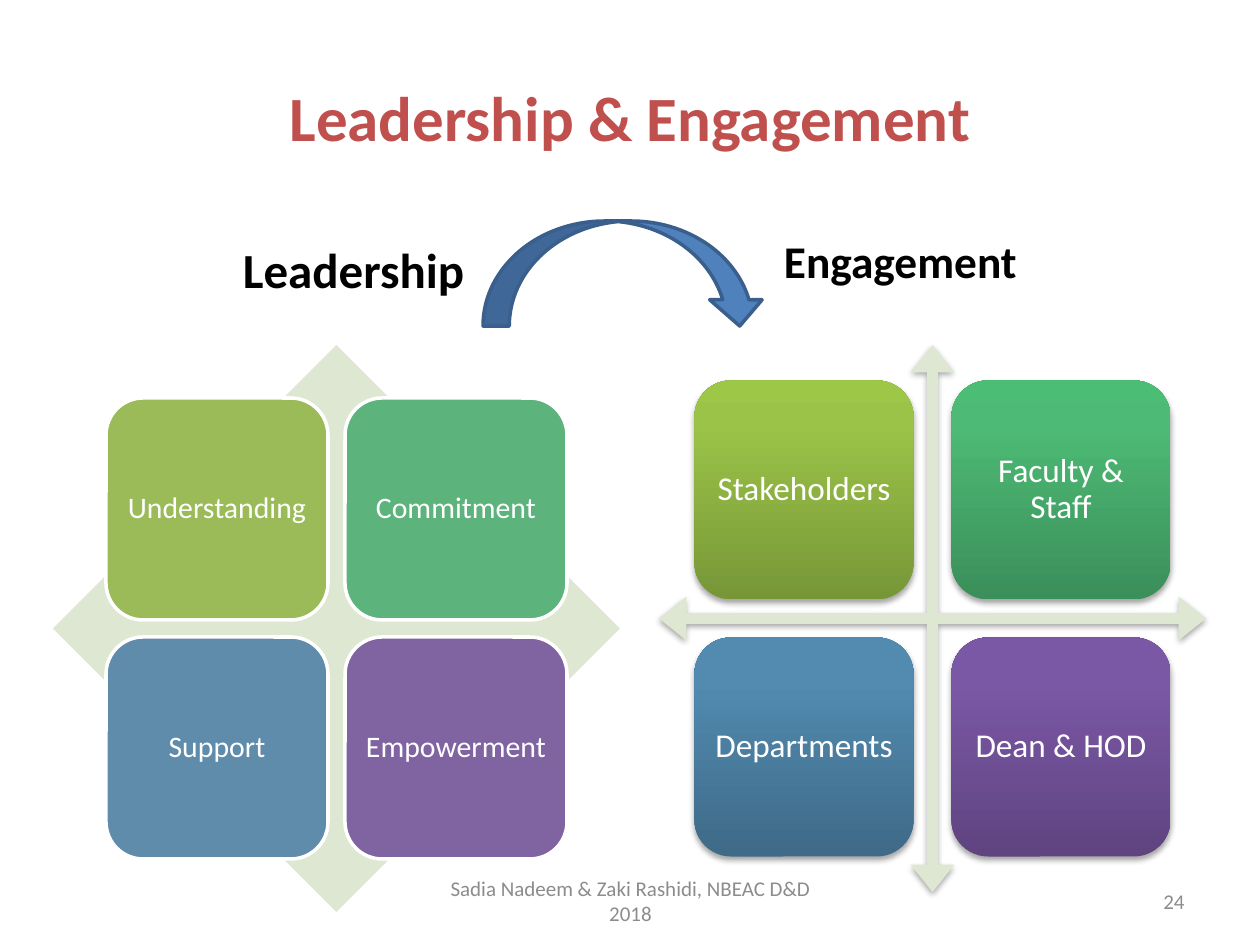
import copy
from dataclasses import dataclass

import pptx
import pptx.dml.color
import pptx.enum.shapes
import pptx.enum.text
import pptx.oxml
import pptx.oxml.ns
import pptx.util

ALIGN = pptx.enum.text.PP_ALIGN
ANCHOR = pptx.enum.text.MSO_ANCHOR
SHAPE = pptx.enum.shapes.MSO_SHAPE


@dataclass(frozen=True)
class Theme:
    font: str = "Calibri"
    title: str = "C0504D"
    heading: str = "000000"
    muted: str = "8C8C8C"
    white: str = "FFFFFF"
    backdrop: str = "DEE7D1"
    arrow: str = "4F81BD"
    arrow_line: str = "3A5F8C"
    line_width: float = 2
    title_size: float = 36
    leadership_size: float = 28
    engagement_size: float = 25.9
    leadership_tile_size: float = 17
    engagement_tile_size: float = 19
    footer_size: float = 12


THEME = Theme()

# Content: text, box in px, size, colour, bold, alignment, anchor
TEXTS = [
    ("Leadership & Engagement", (63, 38, 1134, 157), THEME.title_size,
     THEME.title, True, ALIGN.CENTER, ANCHOR.MIDDLE),
    ("Leadership", (87, 232, 533, 73), THEME.leadership_size,
     THEME.heading, True, ALIGN.CENTER, ANCHOR.BOTTOM),
    ("Engagement ", (638, 232, 535, 62), THEME.engagement_size,
     THEME.heading, True, ALIGN.CENTER, ANCHOR.BOTTOM),
    ("24", (903, 876, 294, 50), THEME.footer_size,
     THEME.muted, False, ALIGN.RIGHT, ANCHOR.MIDDLE),
    ("Sadia Nadeem & Zaki Rashidi, NBEAC D&D 2018", (431, 876, 399, 50), THEME.footer_size,
     THEME.muted, False, ALIGN.CENTER, ANCHOR.MIDDLE),
]

# Tiles run left to right, top to bottom; several colours make a gradient from the bottom up
MATRICES = [
    {"backdrop": SHAPE.DIAMOND, "box": (53, 345, 567, 567), "adjustments": (), "shadow": False,
     "tile": 222, "gap": 17, "inset": 9, "size": THEME.leadership_tile_size,
     "tiles": [("Understanding", ["9BBB59"]), ("Commitment", ["5CB37C"]),
               ("Support", ["608CAB"]), ("Empowerment", ["8064A2"])]},
    {"backdrop": SHAPE.QUAD_ARROW, "box": (659, 345, 547, 547),
     "adjustments": (0.02, 0.04, 0.05), "shadow": True,
     "tile": 219, "gap": 38, "inset": 10, "size": THEME.engagement_tile_size,
     "tiles": [("Stakeholders", ["779737", "9BC348", "9DC746"]),
               ("Faculty & Staff", ["3B8F5A", "4DBA75", "4BBD75"]),
               ("Departments", ["3F6A88", "528AB0", "518BB3"]),
               ("Dean & HOD", ["5F4480", "7B58A6", "7C57A8"])]},
]
CURVED_ARROW_BOX = (483, 221, 283, 105)
GRADIENT_POSITIONS = (0, 0.8, 1)


def px(value):
    return pptx.util.Emu(round(value * 914400 / 126))


def rgb(value):
    return pptx.dml.color.RGBColor.from_string(value)


def write_text(shape, text, size, color, bold=False, align=ALIGN.CENTER, anchor=ANCHOR.MIDDLE):
    frame = shape.text_frame
    frame.word_wrap = True
    frame.vertical_anchor = anchor
    paragraph = frame.paragraphs[0]
    paragraph.alignment = align
    run = paragraph.add_run()
    run.text = text
    run.font.name = THEME.font
    run.font.size = pptx.util.Pt(size)
    run.font.bold = bold
    run.font.color.rgb = rgb(color)
    return frame


def fill_shape(shape, colors):
    if len(colors) == 1:
        shape.fill.solid()
        shape.fill.fore_color.rgb = rgb(colors[0])
        return
    shape.fill.gradient()
    shape.fill.gradient_angle = 90
    stops = shape._element.spPr.find(".//" + pptx.oxml.ns.qn("a:gsLst"))
    stops.append(copy.deepcopy(stops[-1]))
    for stop, position, color in zip(shape.fill.gradient_stops, GRADIENT_POSITIONS, colors):
        stop.position = position
        stop.color.rgb = rgb(color)


def add_shape(slide, kind, box, colors, line=None, shadow=False):
    shape = slide.shapes.add_shape(kind, *map(px, box))
    fill_shape(shape, colors)
    if line:
        shape.line.color.rgb = rgb(line)
        shape.line.width = pptx.util.Pt(THEME.line_width)
    else:
        shape.line.fill.background()
    shape.shadow.inherit = False
    if shadow:
        effects = shape._element.spPr.find(pptx.oxml.ns.qn("a:effectLst"))
        effects.append(pptx.oxml.parse_xml(
            f'<a:outerShdw {pptx.oxml.ns.nsdecls("a")} blurRad="40000" dist="23000" '
            'dir="5400000" rotWithShape="0"><a:srgbClr val="000000">'
            '<a:alpha val="35000"/></a:srgbClr></a:outerShdw>'))
    return shape


def add_matrix(slide, matrix):
    left, top, width, height = matrix["box"]
    shadow = matrix["shadow"]
    backdrop = add_shape(slide, matrix["backdrop"], matrix["box"], [THEME.backdrop], shadow=shadow)
    for index, value in enumerate(matrix["adjustments"]):
        backdrop.adjustments[index] = value

    # Two by two tiles, centred on the backdrop
    tile, gap = matrix["tile"], matrix["gap"]
    span = 2 * tile + gap
    for index, (text, colors) in enumerate(matrix["tiles"]):
        row, column = divmod(index, 2)
        box = (left + (width - span) / 2 + column * (tile + gap),
               top + (height - span) / 2 + row * (tile + gap), tile, tile)
        shape = add_shape(slide, SHAPE.ROUNDED_RECTANGLE, box, colors,
                          None if shadow else THEME.white, shadow)
        frame = write_text(shape, text, matrix["size"], THEME.white)
        frame.paragraphs[0].line_spacing = 0.9
        frame.margin_left = frame.margin_right = px(matrix["inset"])
        frame.margin_top = frame.margin_bottom = px(matrix["inset"])


def main():
    presentation = pptx.Presentation()
    presentation.slide_width, presentation.slide_height = px(1260), px(945)
    slide = presentation.slides.add_slide(presentation.slide_layouts[6])

    # Matrices
    for matrix in MATRICES:
        add_matrix(slide, matrix)

    # Arrow from leadership to engagement
    add_shape(slide, SHAPE.CURVED_DOWN_ARROW, CURVED_ARROW_BOX, [THEME.arrow], THEME.arrow_line)

    # Title, headings and footer
    for text, box, *style in TEXTS:
        write_text(slide.shapes.add_textbox(*map(px, box)), text, *style)

    presentation.save("out.pptx")


if __name__ == "__main__":
    main()
